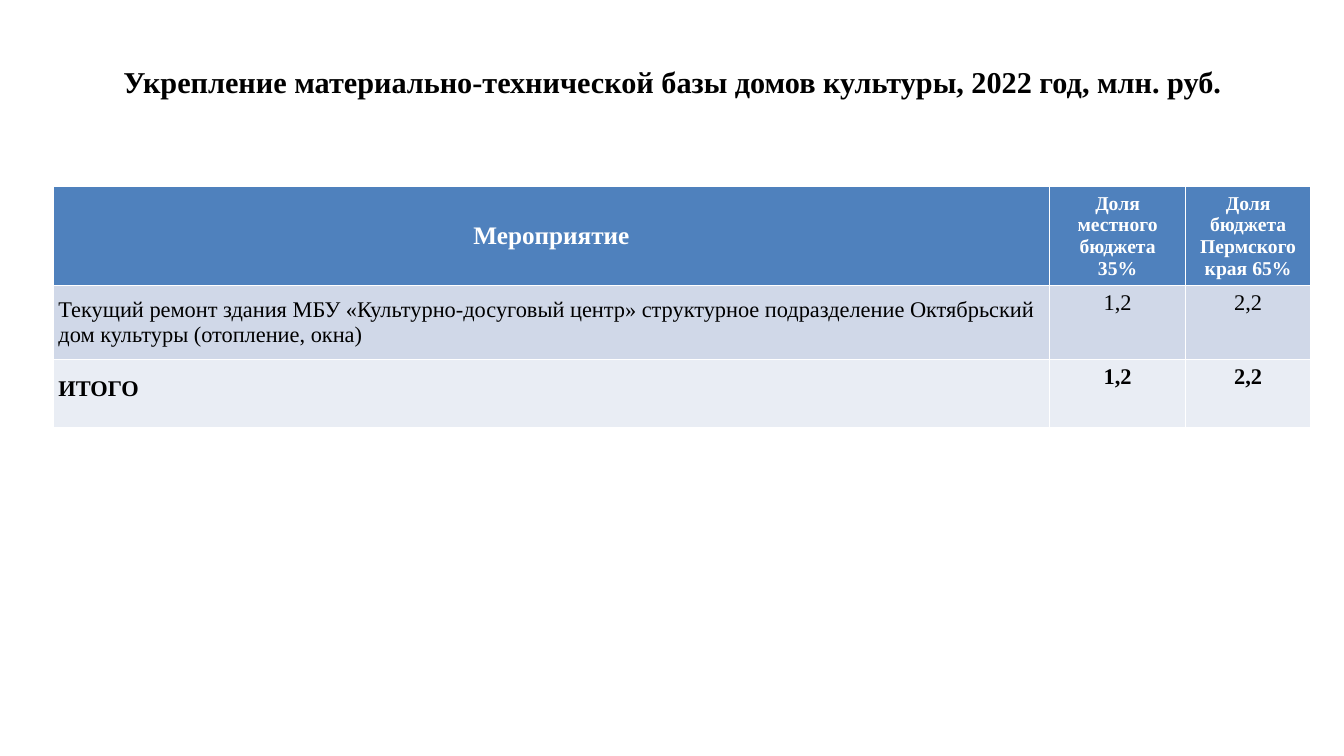
from pptx import Presentation
from pptx.dml.color import RGBColor
from pptx.enum.text import MSO_ANCHOR as Anchor, PP_ALIGN as Align
from pptx.util import Inches, Pt

FONT = "Times New Roman"
BLACK = RGBColor(0x00, 0x00, 0x00)
WHITE = RGBColor(0xFF, 0xFF, 0xFF)
HEADER_BLUE = RGBColor(0x4F, 0x81, 0xBD)
ROW_BLUE = RGBColor(0xD0, 0xD8, 0xE8)
TOTAL_BLUE = RGBColor(0xE9, 0xED, 0xF4)

TITLE = "Укрепление материально-технической базы домов культуры, 2022 год, млн. руб."
COLUMN_WIDTHS = (9.88, 1.35, 1.24)
ROW_HEIGHTS = (0.98, 0.74, 0.67)
ROWS = (
    ("Мероприятие", "Доля местного бюджета 35%", "Доля бюджета Пермского края 65%"),
    ("Текущий ремонт здания МБУ «Культурно-досуговый центр» структурное "
     "подразделение Октябрьский дом культуры (отопление, окна)", "1,2", "2,2"),
    ("ИТОГО", "1,2", "2,2"),
)
# Fill, text colour and bold of each row
ROW_STYLES = (
    (HEADER_BLUE, WHITE, True),
    (ROW_BLUE, BLACK, False),
    (TOTAL_BLUE, BLACK, True),
)


def write_text(text_frame, text, size, color, bold, align):
    paragraph = text_frame.paragraphs[0]
    paragraph.alignment = align
    run = paragraph.add_run()
    run.text = text
    run.font.name = FONT
    run.font.size = Pt(size)
    run.font.bold = bold
    run.font.color.rgb = color
    return paragraph


def place_title(slide, left, top, width, height):
    title = slide.shapes.title
    title.left, title.top = Inches(left), Inches(top)
    title.width, title.height = Inches(width), Inches(height)
    title.text_frame.vertical_anchor = Anchor.MIDDLE
    write_text(title.text_frame, TITLE, 21.6, BLACK, True, Align.CENTER)


def fill_cell(cell, row, column):
    fill, color, bold = ROW_STYLES[row]
    is_header, is_label = row == 0, column == 0
    cell.fill.solid()
    cell.fill.fore_color.rgb = fill
    cell.vertical_anchor = Anchor.MIDDLE if is_header or is_label else Anchor.TOP
    if is_header:
        size = 18 if is_label else 14
    else:
        size = 16
    align = Align.LEFT if is_label and not is_header else Align.CENTER
    paragraph = write_text(cell.text_frame, ROWS[row][column], size, color, bold, align)

    # Activity names sit close to the cell edge
    if is_label and not is_header:
        cell.margin_left = cell.margin_right = Inches(0.05)
        cell.margin_top = cell.margin_bottom = 0
        if row == len(ROWS) - 1:
            paragraph.line_spacing = Pt(11)


def place_budget_table(slide, left, top):
    frame = slide.shapes.add_table(
        len(ROWS), len(COLUMN_WIDTHS), Inches(left), Inches(top),
        Inches(sum(COLUMN_WIDTHS)), Inches(sum(ROW_HEIGHTS)))
    table = frame.table
    for column, width in zip(table.columns, COLUMN_WIDTHS):
        column.width = Inches(width)
    for row, height in zip(table.rows, ROW_HEIGHTS):
        row.height = Inches(height)
    for row in range(len(ROWS)):
        for column in range(len(COLUMN_WIDTHS)):
            fill_cell(table.cell(row, column), row, column)


def main():
    presentation = Presentation()
    presentation.slide_width = Inches(13.33)
    presentation.slide_height = Inches(7.5)
    slide = presentation.slides.add_slide(presentation.slide_layouts[5])
    place_title(slide, 0.67, 0.45, 12, 0.71)
    place_budget_table(slide, 0.53, 1.85)
    presentation.save("out.pptx")


if __name__ == "__main__":
    main()
